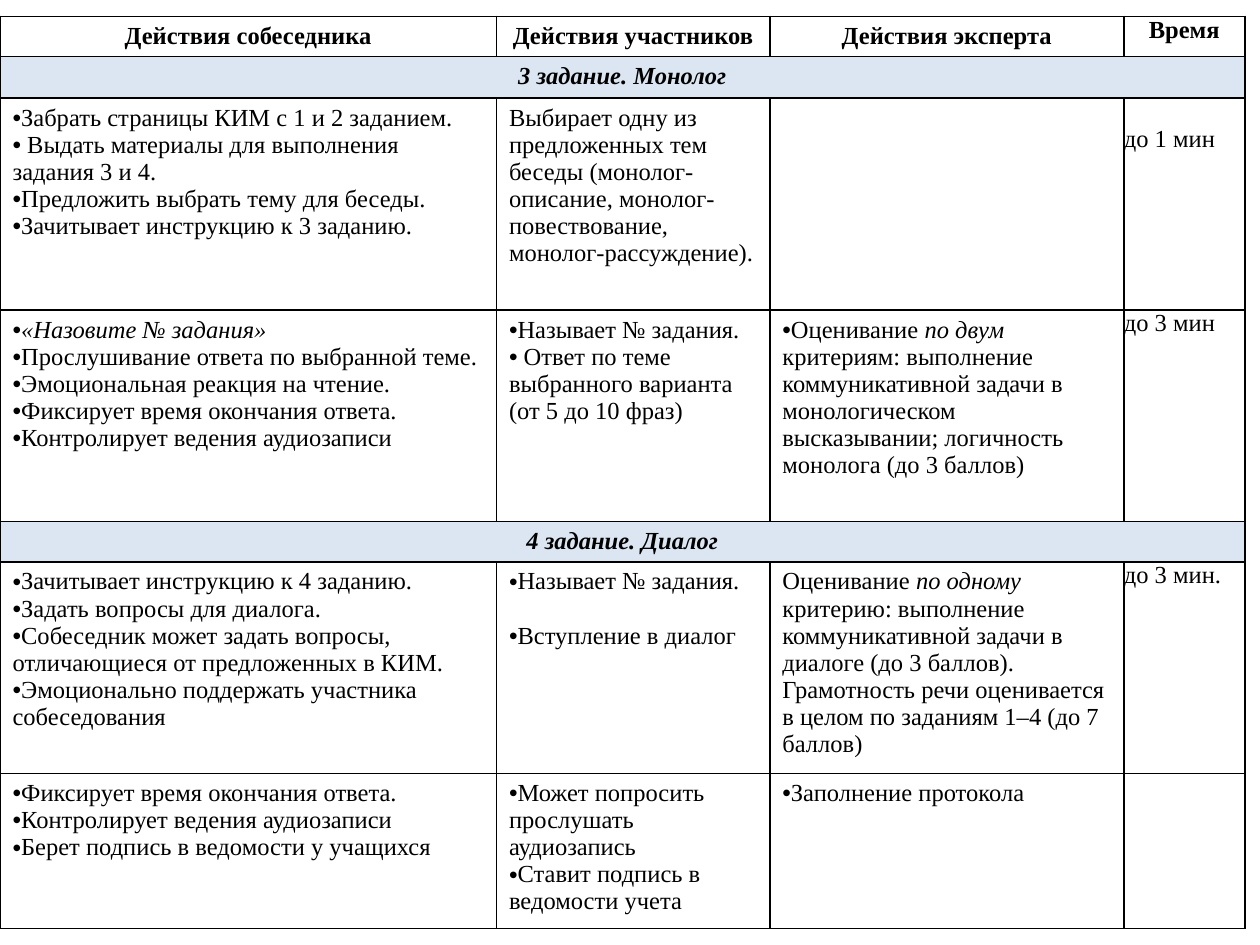
from pptx import Presentation
from pptx.dml.color import RGBColor
from pptx.enum.text import MSO_ANCHOR, PP_ALIGN
from pptx.oxml.ns import qn
from pptx.util import Inches, Pt
from lxml.etree import SubElement

BLACK = RGBColor(0x00, 0x00, 0x00)
PALE_BLUE = RGBColor(0xDC, 0xE6, 0xF2)

LINE_HEIGHT = Pt(15.5)
BASE_FONT = {"name": "Times New Roman", "size": Pt(14), "bold": False, "italic": False}
HEADER_FONT = {**BASE_FONT, "bold": True}
SECTION_FONT = {**HEADER_FONT, "italic": True}

TABLE_TOP = 0.13
COLUMN_WIDTHS = [3.94, 2.17, 2.81, 0.96]
ROW_HEIGHTS = [0.32, 0.33, 1.68, 1.68, 0.32, 1.68, 1.23]
TIME_COLUMN = len(COLUMN_WIDTHS) - 1

# "•" starts a bulleted paragraph, *...* is italic, None leaves one line free
HEADERS = ["Действия собеседника", "Действия участников", "Действия эксперта", "Время"]
SECTIONS = {1: "3 задание. Монолог", 4: "4 задание. Диалог"}
BODY = {
    2: [
        ["•Забрать страницы КИМ с 1 и 2 заданием.",
         "• Выдать материалы для выполнения задания 3 и 4.",
         "•Предложить выбрать тему для беседы.",
         "•Зачитывает инструкцию к 3 заданию."],
        ["Выбирает одну из предложенных тем беседы (монолог-описание, "
         "монолог-повествование, монолог-рассуждение)."],
        [],
        [None, "до 1 мин"],
    ],
    3: [
        ["•*«Назовите № задания»*",
         "•Прослушивание ответа по выбранной теме.",
         "•Эмоциональная реакция на чтение.",
         "•Фиксирует время окончания ответа.",
         "•Контролирует ведения аудиозаписи"],
        ["•Называет № задания.",
         "• Ответ по теме выбранного варианта (от 5 до 10 фраз)"],
        ["•Оценивание *по двум *критериям: выполнение коммуникативной задачи "
         "в монологическом",
         "высказывании; логичность монолога (до 3 баллов)"],
        ["до 3 мин"],
    ],
    5: [
        ["•Зачитывает инструкцию к 4 заданию.",
         "•Задать вопросы для диалога.",
         "•Собеседник может задать вопросы, отличающиеся от предложенных в КИМ.",
         "•Эмоционально поддержать участника собеседования"],
        ["•Называет № задания.", None, "•Вступление в диалог"],
        ["Оценивание *по одному *критерию: выполнение коммуникативной задачи "
         "в диалоге (до 3 баллов). Грамотность речи оценивается в целом "
         "по заданиям 1–4 (до 7 баллов)"],
        ["до 3 мин."],
    ],
    6: [
        ["•Фиксирует время окончания ответа.",
         "•Контролирует ведения аудиозаписи",
         "•Берет подпись в ведомости у учащихся"],
        ["•Может попросить прослушать аудиозапись",
         "•Ставит подпись в ведомости учета"],
        ["•Заполнение протокола"],
        [],
    ],
}


def add_bullet(paragraph):
    properties = paragraph._p.get_or_add_pPr()
    properties.set("marL", "0")
    properties.set("indent", "0")
    SubElement(properties, qn("a:buFont"), typeface="Arial")
    SubElement(properties, qn("a:buChar"), char="•")


def add_runs(paragraph, text, font_format):
    for position, part in enumerate(text.split("*")):
        if not part:
            continue
        run = paragraph.add_run()
        run.text = part
        for attribute, value in font_format.items():
            setattr(run.font, attribute, value)
        if position % 2:
            run.font.italic = True
        run.font.color.rgb = BLACK


def write_cell(cell, texts, font_format=BASE_FONT, alignment=PP_ALIGN.LEFT):
    frame = cell.text_frame
    paragraph = None
    gap = 0
    for text in texts:
        if text is None:
            gap = LINE_HEIGHT
            continue
        if paragraph is None:
            paragraph = frame.paragraphs[0]
            cell.margin_top += gap
        else:
            paragraph = frame.add_paragraph()
            paragraph.space_before = gap
        gap = 0
        paragraph.alignment = alignment
        if text.startswith("•"):
            add_bullet(paragraph)
        add_runs(paragraph, text.removeprefix("•"), font_format)


def format_cell(cell, is_time, fill_color=None):
    side, end = (0, 0) if is_time else (Inches(0.1), Inches(0.05))
    margins = {"margin_left": side, "margin_right": side,
               "margin_top": end, "margin_bottom": end,
               "vertical_anchor": MSO_ANCHOR.TOP}
    for attribute, value in margins.items():
        setattr(cell, attribute, value)
    properties = cell._tc.get_or_add_tcPr()
    for edge in ("a:lnL", "a:lnR", "a:lnT", "a:lnB"):
        line = SubElement(properties, qn(edge), w=str(Pt(1)))
        line_fill = SubElement(line, qn("a:solidFill"))
        SubElement(line_fill, qn("a:srgbClr"), val=str(BLACK))
    if fill_color is None:
        cell.fill.background()
    else:
        cell.fill.solid()
        cell.fill.fore_color.rgb = fill_color


def add_plain_table(slide):
    table = slide.shapes.add_table(
        len(ROW_HEIGHTS), len(COLUMN_WIDTHS), 0, Inches(TABLE_TOP),
        Inches(sum(COLUMN_WIDTHS)), Inches(sum(ROW_HEIGHTS))).table
    table.first_row = table.horz_banding = False
    for column, width in zip(table.columns, COLUMN_WIDTHS):
        column.width = Inches(width)
    for row, height in zip(table.rows, ROW_HEIGHTS):
        row.height = Inches(height)
    for row_index, row in enumerate(table.rows):
        is_section = row_index in SECTIONS
        for column_index, cell in enumerate(row.cells):
            format_cell(cell, column_index == TIME_COLUMN and not is_section,
                        PALE_BLUE if is_section else None)
    return table


def main():
    presentation = Presentation()
    presentation.slide_width = Inches(10)
    presentation.slide_height = Inches(7.5)
    slide = presentation.slides.add_slide(presentation.slide_layouts[6])
    table = add_plain_table(slide)

    # Column headings
    for column, heading in enumerate(HEADERS):
        write_cell(table.cell(0, column), [heading], HEADER_FONT, PP_ALIGN.CENTER)

    # Task bands across the whole table
    for row, title in SECTIONS.items():
        band = table.cell(row, 0)
        band.merge(table.cell(row, TIME_COLUMN))
        write_cell(band, [title], SECTION_FONT, PP_ALIGN.CENTER)

    # Actions and timing
    for row, cells in BODY.items():
        for column, texts in enumerate(cells):
            write_cell(table.cell(row, column), texts)

    presentation.save("out.pptx")


if __name__ == "__main__":
    main()
